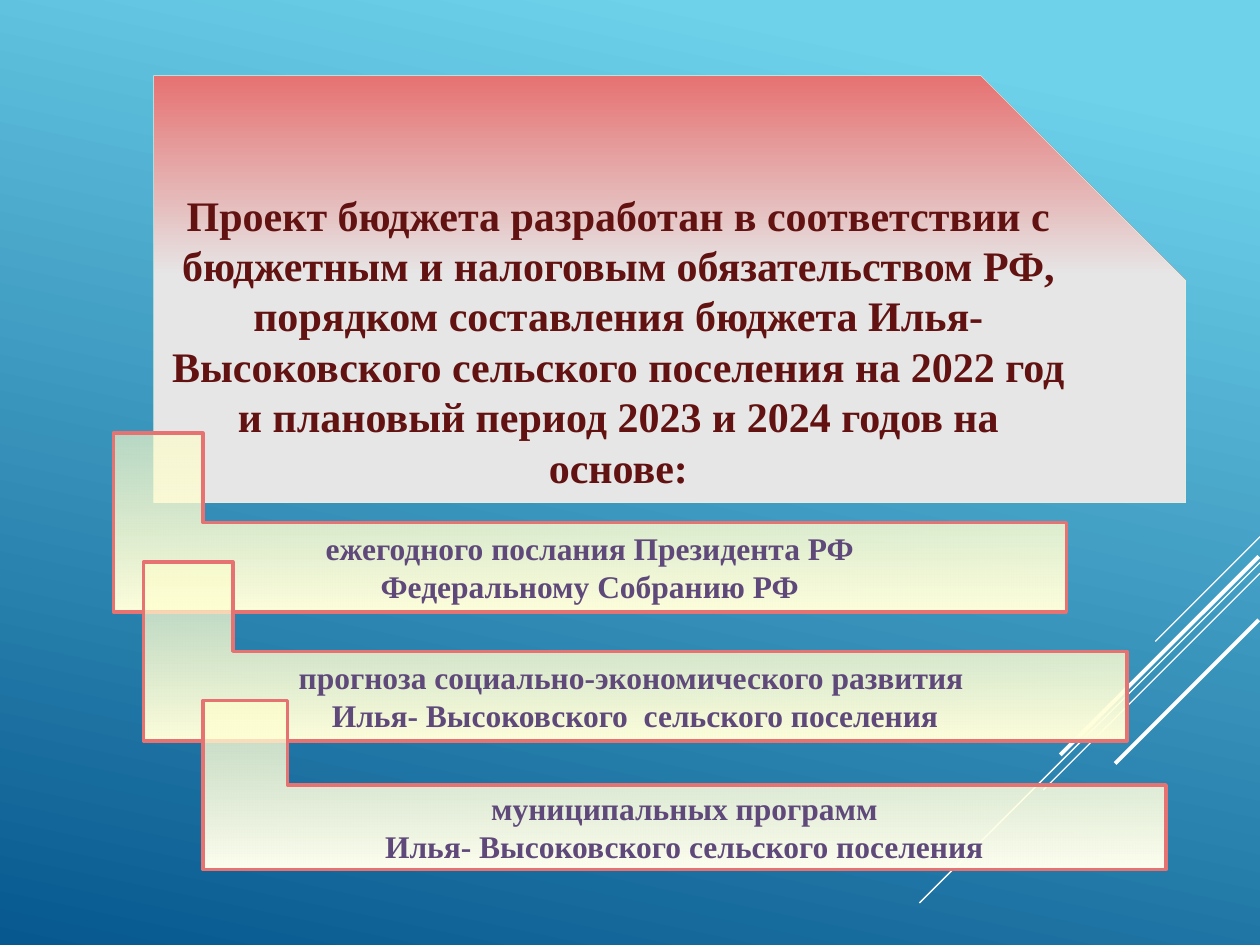
from dataclasses import dataclass

from lxml.etree import SubElement
from pptx import Presentation
from pptx.dml.color import RGBColor
from pptx.dml.fill import FillFormat
from pptx.enum.shapes import MSO_CONNECTOR, MSO_SHAPE
from pptx.enum.text import MSO_ANCHOR, PP_ALIGN
from pptx.oxml.ns import qn
from pptx.shapes.autoshape import Shape
from pptx.slide import Slide
from pptx.util import Pt

FONT = "Times New Roman"
SKY = RGBColor(0x6E, 0xD2, 0xEB)
DEEP_BLUE = RGBColor(0x06, 0x58, 0x8E)
WHITE = RGBColor(0xFF, 0xFF, 0xFF)
CORAL = RGBColor(0xE6, 0x72, 0x72)
LIGHT_GREY = RGBColor(0xE6, 0xE6, 0xE6)
PALE_GREEN = RGBColor(0xEA, 0xF1, 0xDD)
MAROON = RGBColor(0x63, 0x12, 0x12)
PURPLE = RGBColor(0x5F, 0x49, 0x7A)
CREAM = RGBColor(0xFF, 0xFF, 0xCC)
PALE_CREAM = RGBColor(0xFF, 0xFF, 0xDB)
IVORY = RGBColor(0xFF, 0xFF, 0xEF)


@dataclass(frozen=True)
class Stop:
    position: float
    color: RGBColor
    opacity: float = 1


@dataclass(frozen=True)
class Stripe:
    """A diagonal line falling to the left at 45 degrees."""
    right: float
    top: float
    drop: float
    weight: float


@dataclass(frozen=True)
class Panel:
    left: float
    top: float
    width: float
    height: float
    stops: tuple[Stop, Stop]
    border: RGBColor
    border_weight: float
    text: str
    text_size: float
    text_color: RGBColor


STRIPES = [
    Stripe(720, 306.7, 59.8, 0.75),
    Stripe(720, 321.4, 194.6, 0.75),
    Stripe(720, 327.6, 123.8, 0.75),
    Stripe(719.3, 318, 113.4, 2.25),
    Stripe(719.3, 354.2, 82.1, 2.25),
]

HEADING = Panel(
    87.8, 43.2, 589.7, 244,
    (Stop(0, CORAL), Stop(0.47, LIGHT_GREY)), PALE_GREEN, 0.25,
    "Проект бюджета разработан в соответствии с бюджетным и налоговым "
    "обязательством РФ, порядком составления бюджета Илья- Высоковского "
    "сельского поселения на 2022 год и плановый период 2023 и 2024 годов "
    "на основе:",
    24, MAROON,
)


def basis(left: float, top: float, width: float, height: float,
          opacity: float, end_color: RGBColor, text: str) -> Panel:
    """Describe one L-shaped step naming a basis of the budget."""
    stops = (Stop(0, CREAM, opacity), Stop(1, end_color))
    return Panel(left, top, width, height, stops, CORAL, 2, text, 18, PURPLE)


BASES = [
    basis(64.8, 247.5, 544.5, 102.2, 0.64, PALE_CREAM,
          "ежегодного послания Президента РФ\nФедеральному Собранию РФ"),
    basis(82, 321.1, 562, 102.2, 0.6, PALE_CREAM,
          "прогноза социально-экономического развития \n"
          "Илья- Высоковского  сельского поселения"),
    basis(116, 400.3, 550.3, 96.5, 0.7, IVORY,
          "муниципальных программ\nИлья- Высоковского сельского поселения"),
]


def apply_gradient(fill: FillFormat, stops: tuple[Stop, Stop],
                   clockwise_angle: float) -> None:
    fill.gradient()
    fill.gradient_angle = 360 - clockwise_angle
    for gradient_stop, stop in zip(fill.gradient_stops, stops):
        gradient_stop.position = stop.position
        gradient_stop.color.rgb = stop.color


def set_opacity(shape: Shape, stops: tuple[Stop, Stop]) -> None:
    colors = shape.element.spPr.find(qn("a:gradFill")).iter(qn("a:srgbClr"))
    for color, stop in zip(colors, stops):
        if stop.opacity < 1:
            alpha = SubElement(color, qn("a:alpha"))
            alpha.set("val", str(round(stop.opacity * 100000)))


def add_stripe(slide: Slide, stripe: Stripe) -> None:
    connector = slide.shapes.add_connector(
        MSO_CONNECTOR.STRAIGHT, Pt(stripe.right), Pt(stripe.top),
        Pt(stripe.right - stripe.drop), Pt(stripe.top + stripe.drop))
    connector.line.color.rgb = WHITE
    connector.line.width = Pt(stripe.weight)
    SubElement(connector.element.spPr, qn("a:effectLst"))


def add_panel(slide: Slide, panel: Panel, kind: MSO_SHAPE) -> Shape:
    shape = slide.shapes.add_shape(
        kind, Pt(panel.left), Pt(panel.top),
        Pt(panel.width), Pt(panel.height))
    shape.shadow.inherit = False
    apply_gradient(shape.fill, panel.stops, 90)
    set_opacity(shape, panel.stops)
    shape.line.color.rgb = panel.border
    shape.line.width = Pt(panel.border_weight)
    text_frame = shape.text_frame
    text_frame.text = panel.text
    text_frame.word_wrap = True
    text_frame.vertical_anchor = MSO_ANCHOR.MIDDLE
    for paragraph in text_frame.paragraphs:
        paragraph.alignment = PP_ALIGN.CENTER
        for run in paragraph.runs:
            run.font.name = FONT
            run.font.size = Pt(panel.text_size)
            run.font.bold = True
            run.font.color.rgb = panel.text_color
    return shape


def add_corner_panel(slide: Slide, panel: Panel) -> None:
    """Add a panel with the L-shaped preset, which MSO_SHAPE does not list."""
    shape = add_panel(slide, panel, MSO_SHAPE.RECTANGLE)
    shape.element.spPr.find(qn("a:prstGeom")).set("prst", "corner")


def main() -> None:
    presentation = Presentation()
    presentation.slide_width = Pt(720)
    presentation.slide_height = Pt(540)
    slide = presentation.slides.add_slide(presentation.slide_layouts[6])
    apply_gradient(slide.background.fill,
                   (Stop(0.1, SKY), Stop(1, DEEP_BLUE)), 102)
    for stripe in STRIPES:
        add_stripe(slide, stripe)
    heading = add_panel(slide, HEADING, MSO_SHAPE.SNIP_1_RECTANGLE)
    heading.adjustments[0] = 0.48
    for panel in BASES:
        add_corner_panel(slide, panel)
    presentation.save("out.pptx")


if __name__ == "__main__":
    main()
